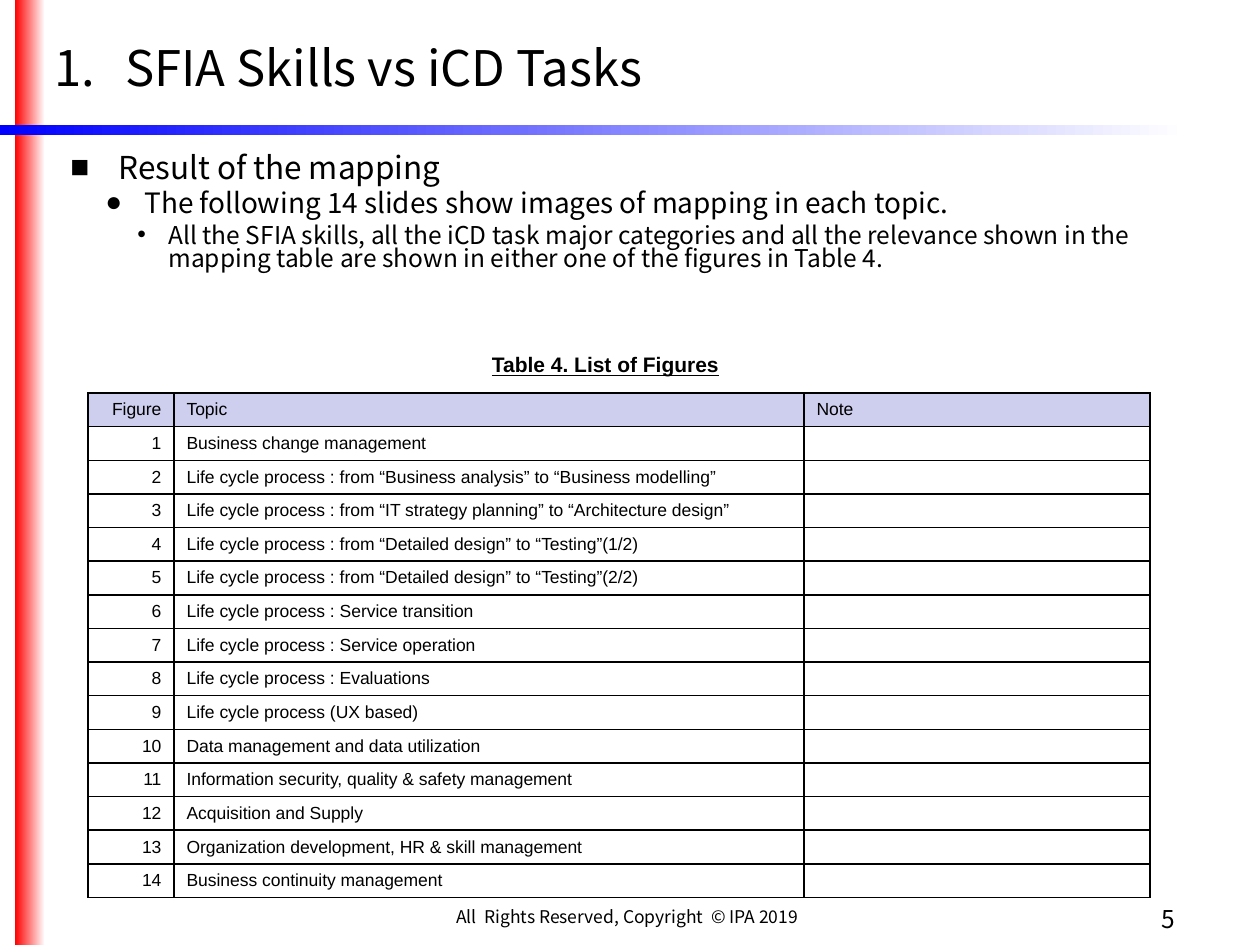
import pptx
import pptx.dml.color
import pptx.enum.shapes
import pptx.enum.text
import pptx.oxml
import pptx.oxml.ns
import pptx.util

SANS = "Noto Sans CJK JP"
ARIAL = "Arial"
ALIGN = pptx.enum.text.PP_ALIGN
ANCHOR = pptx.enum.text.MSO_ANCHOR
NS = pptx.oxml.ns.nsdecls("a")

TOPICS = [
    "Business change management",
    "Life cycle process : from “Business analysis” to “Business modelling”",
    "Life cycle process : from “IT strategy planning” to “Architecture design”",
    "Life cycle process : from “Detailed design” to “Testing”(1/2)",
    "Life cycle process : from “Detailed design” to “Testing”(2/2)",
    "Life cycle process : Service transition",
    "Life cycle process : Service operation",
    "Life cycle process : Evaluations",
    "Life cycle process (UX based)",
    "Data management and data utilization",
    "Information security, quality & safety management",
    "Acquisition and Supply",
    "Organization development, HR & skill management",
    "Business continuity management",
]

BULLETS = [
    ("Result of the mapping", "■", 18, 48, 48, 0),
    ("The following 14 slides show images of mapping in each topic.", "●", 16, 74, 39, 4),
    ("All the SFIA skills, all the iCD task major categories and all the relevance "
     "shown in the mapping table are shown in either one of the figures in Table 4.",
     "•", 14, 98, 31, 3.5),
]


def px(n):
    return pptx.util.Emu(round(n * 914400 / 126))


def color(hex_str):
    return pptx.dml.color.RGBColor.from_string(hex_str)


def write(tf, text, size, font=SANS, align=ALIGN.LEFT, bold=False, underline=False,
          bullet=None, margin=0, hang=0, level=0, before=0, spacing=1.0):
    p = tf.paragraphs[0]
    if p.runs:
        p = tf.add_paragraph()
    p.alignment, p.level, p.line_spacing = align, level, spacing
    if before:
        p.space_before = pptx.util.Pt(before)
    if bullet:
        pPr = p._p.get_or_add_pPr()
        pPr.set("marL", str(px(margin)))
        pPr.set("indent", str(-px(hang)))
        for xml in bullet:
            pPr.append(pptx.oxml.parse_xml(xml))
    if not text:
        p._p.append(pptx.oxml.parse_xml(f'<a:endParaRPr {NS} sz="{size * 100}"/>'))
        return
    r = p.add_run()
    r.text = text
    r.font.size, r.font.name = pptx.util.Pt(size), font
    r.font.bold, r.font.underline = bold, underline
    r.font.color.rgb = color("000000")


def add_box(s, x, y, w, h, wrap=True):
    tf = s.shapes.add_textbox(px(x), px(y), px(w), px(h)).text_frame
    tf.word_wrap = wrap
    tf.margin_top = tf.margin_bottom = 0
    return tf


def add_band(s, x, y, w, h, start, end):
    sp = s.shapes.add_shape(pptx.enum.shapes.MSO_SHAPE.RECTANGLE, px(x), px(y), px(w), px(h))
    sp.shadow.inherit = False
    sp.line.fill.background()
    sp.fill.gradient()
    sp.fill.gradient_angle = 0
    for stop, hex_str in zip(sp.fill.gradient_stops, (start, end)):
        stop.color.rgb = color(hex_str)


def add_title(s, x, y, w, h):
    number = f'<a:buFont {NS} typeface="{SANS}"/>', f'<a:buAutoNum {NS} type="arabicPeriod"/>'
    tf = add_box(s, x, y, w, h, wrap=False)
    write(tf, "SFIA Skills vs iCD Tasks", 28, bullet=number, margin=71, hang=71)


def add_body(s, x, y, w, h):
    tf = add_box(s, x, y, w, h)
    for level, (text, char, size, margin, hang, before) in enumerate(BULLETS):
        bullet = f'<a:buFont {NS} typeface="{ARIAL}"/>', f'<a:buChar {NS} char="{char}"/>'
        write(tf, text, size, bullet=bullet, margin=margin, hang=hang,
              level=level, before=before, spacing=0.8)


def set_borders(cell):
    tcPr = cell._tc.get_or_add_tcPr()
    for i, side in enumerate("LRTB"):
        tcPr.insert(i, pptx.oxml.parse_xml(
            f'<a:ln{side} {NS} w="12700"><a:solidFill><a:srgbClr val="000000"/>'
            f'</a:solidFill></a:ln{side}>'))


def add_figure_table(s, x, y, w, h):
    rows = [("Figure", "Topic", "Note")]
    rows += [(str(n), topic, "") for n, topic in enumerate(TOPICS, 1)]
    widths = 86, 630, w - 716
    table = s.shapes.add_table(len(rows), 3, px(x), px(y), px(w), px(h)).table
    table.first_row = table.horz_banding = False
    for col, width in zip(table.columns, widths):
        col.width = px(width)
    for i, row in enumerate(rows):
        table.rows[i].height = px(h / len(rows))
        for j, text in enumerate(row):
            cell = table.cell(i, j)
            cell.vertical_anchor = ANCHOR.MIDDLE
            cell.margin_top = cell.margin_bottom = px(5)
            if i == 0:
                cell.fill.solid()
                cell.fill.fore_color.rgb = color("CECEEF")
            else:
                cell.fill.background()
            set_borders(cell)
            write(cell.text_frame, text, 10, ARIAL, ALIGN.LEFT if j else ALIGN.RIGHT)


def add_caption(s, x, y, w, h):
    write(add_box(s, x, y, w, h), "Table 4. List of Figures", 12, ARIAL,
          ALIGN.CENTER, bold=True, underline=True)


def add_footer(s, x, y, w, h):
    write(add_box(s, x, y + 2, 430, h), "All  Rights Reserved, Copyright  © IPA 2019", 10,
          align=ALIGN.CENTER)
    write(add_box(s, x + w - 294, y, 294, h), "5", 14, align=ALIGN.RIGHT)


def main():
    prs = pptx.Presentation()
    prs.slide_width, prs.slide_height = px(1260), px(945)
    s = prs.slides.add_slide(prs.slide_layouts[6])
    add_band(s, 15, 0, 30, 945, "FF0000", "FFFFFF")
    add_band(s, 0, 125, 1186, 10, "0000FF", "FFFFFF")
    add_title(s, 42, 37, 665, 72)
    add_body(s, 58, 155, 1144, 173)
    add_caption(s, 433, 352, 345, 27)
    add_figure_table(s, 88, 393, 1062, 505)
    add_footer(s, 412, 904, 775, 37)
    prs.save("out.pptx")


if __name__ == "__main__":
    main()
